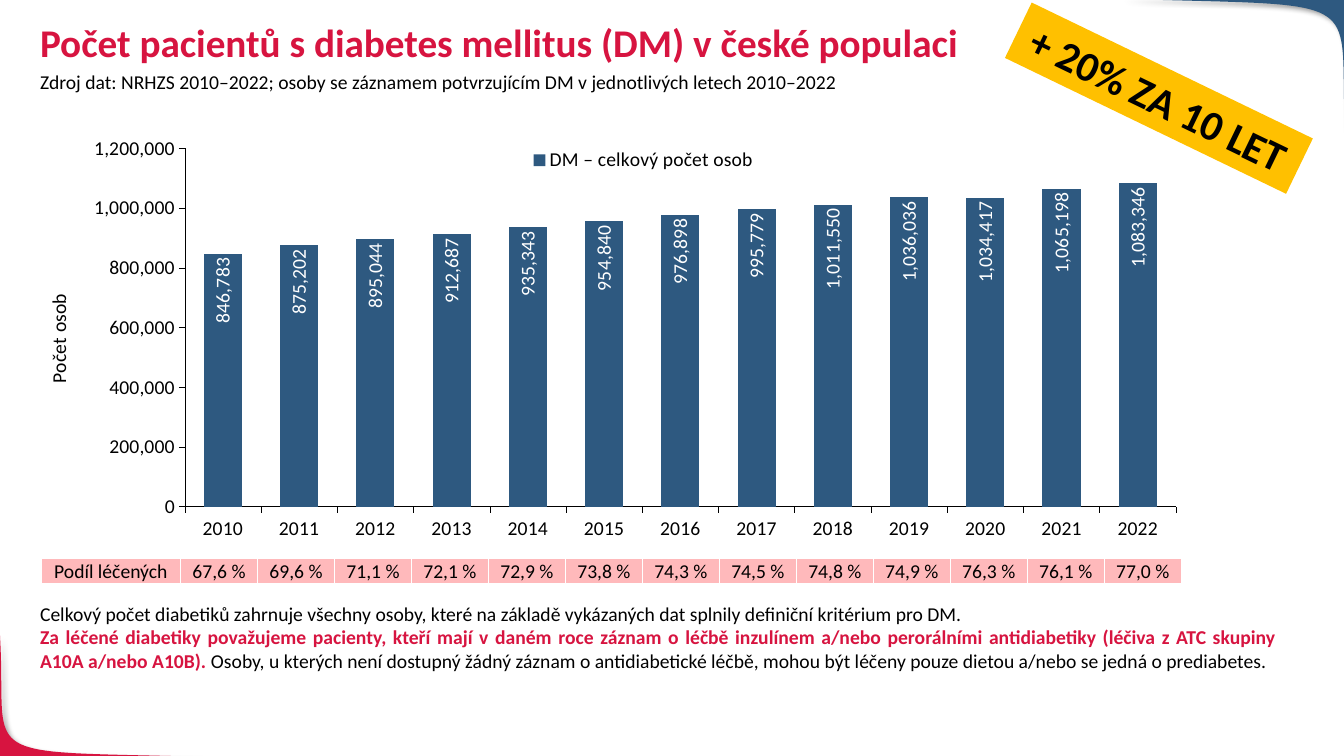
from dataclasses import dataclass

from lxml import etree
from pptx import Presentation
from pptx.chart.data import CategoryChartData
from pptx.dml.color import RGBColor
from pptx.enum.chart import XL_CHART_TYPE, XL_LABEL_POSITION, XL_LEGEND_POSITION, XL_TICK_MARK
from pptx.enum.shapes import MSO_SHAPE
from pptx.enum.text import MSO_ANCHOR, PP_ALIGN
from pptx.oxml import parse_xml
from pptx.oxml.ns import nsdecls, qn
from pptx.util import Cm, Pt


@dataclass(frozen=True)
class Theme:
    font: str = "Calibri"
    red: RGBColor = RGBColor(0xD7, 0x14, 0x40)
    blue: RGBColor = RGBColor(0x2E, 0x59, 0x80)
    pink: RGBColor = RGBColor(0xFF, 0xB9, 0xBB)
    amber: RGBColor = RGBColor(0xFF, 0xC0, 0x00)
    black: RGBColor = RGBColor(0, 0, 0)
    white: RGBColor = RGBColor(0xFF, 0xFF, 0xFF)
    title: Pt = Pt(28)
    badge: Pt = Pt(30)
    body: Pt = Pt(14)
    axis: Pt = Pt(0.32)


theme = Theme()


def style(font, color=theme.black, size=theme.body, bold=False):
    for name, value in {"name": theme.font, "size": size, "bold": bold}.items():
        setattr(font, name, value)
    font.color.rgb = color


def add_layout(parent, **values):
    """Insert a manual chart layout at its place in the schema order."""
    for old in parent.findall(qn("c:layout")):
        parent.remove(old)
    layout = parse_xml(f"<c:layout {nsdecls('c')}><c:manualLayout/></c:layout>")
    for tag, val in values.items():
        etree.SubElement(layout[0], qn(f"c:{tag}")).set("val", str(val))
    position = parent.find(qn("c:legendPos"))
    parent.insert(0 if position is None else parent.index(position) + 1, layout)


prs = Presentation()
prs.slide_width, prs.slide_height = Cm(33.87), Cm(19.05)
s = prs.slides.add_slide(prs.slide_layouts[6])

# Curved corners: four Bézier points in cm, the outer corner, the fill
corners = [
    ([(5.41, 19.08), (-0.86, 18.9), (0.2, 19.28), (0, 16)], (-0.03, 19.08), theme.red),
    ([(28.22, -0.03), (34.8, 0.18), (33.68, -0.25), (33.91, 3.61)], (33.91, -0.03), theme.blue),
]
STEPS = 40
for bezier, corner, color in corners:
    points = []
    for i in range(STEPS + 1):
        t = i / STEPS
        weights = ((1 - t) ** 3, 3 * t * (1 - t) ** 2, 3 * t * t * (1 - t), t ** 3)
        points.append([Cm(sum(w * pt[k] for w, pt in zip(weights, bezier))) for k in (0, 1)])
    outline = s.shapes.build_freeform(*points[0])
    outline.add_line_segments(points[1:] + [[Cm(v) for v in corner]], close=True)
    sp = outline.convert_to_shape()
    sp.fill.solid()
    sp.fill.fore_color.rgb = color
    sp.line.fill.background()
    sp._element.spPr.append(parse_xml(
        f'<a:effectLst {nsdecls("a")}><a:outerShdw blurRad="50800" dist="38100" dir="2700000">'
        '<a:srgbClr val="000000"><a:alpha val="40000"/></a:srgbClr></a:outerShdw></a:effectLst>'))

# Text boxes: place in cm, alignment, paragraphs of (text, font values)
red_bold = {"color": theme.red, "bold": True}
texts = [
    ((0.76, 15.04, 31.67, 2.06), PP_ALIGN.JUSTIFY, [
        [("Celkový počet diabetiků zahrnuje všechny osoby, které na základě vykázaných dat "
          "splnily definiční kritérium pro DM.", {})],
        [("Za léčené diabetiky považujeme pacienty, kteří mají v daném roce záznam o léčbě "
          "inzulínem a/nebo perorálními antidiabetiky (léčiva z ATC skupiny A10A a/nebo A10B).",
          red_bold),
         (" Osoby, u kterých není dostupný žádný záznam o antidiabetické léčbě, mohou být "
          "léčeny pouze dietou a/nebo se jedná o prediabetes.", {})]]),
    ((0.76, 0.46, 29.21, 1.75), PP_ALIGN.LEFT, [
        [("Počet pacientů s diabetes mellitus (DM) v české populaci",
          {**red_bold, "size": theme.title})]]),
    ((0.76, 1.63, 32.94, 0.86), PP_ALIGN.LEFT, [
        [("Zdroj dat: NRHZS 2010–2022; osoby se záznamem potvrzujícím DM "
          "v jednotlivých letech 2010–2022", {})]]),
]
for place, align, paragraphs in texts:
    tf = s.shapes.add_textbox(*map(Cm, place)).text_frame
    tf.word_wrap = True
    for i, runs in enumerate(paragraphs):
        p = tf.add_paragraph() if i else tf.paragraphs[0]
        p.alignment = align
        for text, values in runs:
            r = p.add_run()
            r.text = text
            style(r.font, **values)
            if values.get("size") == theme.title:
                p.line_spacing = 0.9

# Column chart
data = CategoryChartData(number_format="#,##0")
data.categories = [str(year) for year in range(2010, 2023)]
data.add_series("DM – celkový počet osob", [
    846783, 875202, 895044, 912687, 935343, 954840, 976898,
    995779, 1011550, 1036036, 1034417, 1065198, 1083346])
chart = s.shapes.add_chart(XL_CHART_TYPE.COLUMN_CLUSTERED, Cm(1.04), Cm(2.26),
                           Cm(29.18), Cm(11.46), data).chart
style(chart.font)
chart.has_title = False
chart.has_legend = True
chart.legend.position = XL_LEGEND_POSITION.BOTTOM
chart.legend.include_in_layout = True
style(chart.legend.font)
add_layout(chart.legend._element, xMode="edge", yMode="edge", x=0.42, y=0.12, w=0.2, h=0.07)
add_layout(chart._chartSpace.chart.plotArea, layoutTarget="inner", xMode="edge", yMode="edge",
           x=0.124, y=0.129, w=0.856, h=0.788)

for axis in (chart.category_axis, chart.value_axis):
    axis.has_major_gridlines = False
    axis.major_tick_mark = XL_TICK_MARK.OUTSIDE
    axis.format.line.color.rgb = theme.black
    axis.format.line.width = theme.axis
    style(axis.tick_labels.font)
values_axis = chart.value_axis
values_axis.minimum_scale, values_axis.maximum_scale, values_axis.major_unit = 0, 1200000, 200000
values_axis.tick_labels.number_format = "#,##0"
values_axis.tick_labels.number_format_is_linked = False
p = values_axis.axis_title.text_frame.paragraphs[0]
r = p.add_run()
r.text = "Počet osob"
style(r.font)

plot = chart.plots[0]
plot.gap_width, plot.overlap, plot.vary_by_categories = 100, -10, False
series = plot.series[0]
series.format.fill.solid()
series.format.fill.fore_color.rgb = theme.blue
labels = series.data_labels
for name, value in {"show_value": True, "position": XL_LABEL_POSITION.INSIDE_END,
                    "number_format": "#,##0", "number_format_is_linked": False}.items():
    setattr(labels, name, value)
style(labels.font, theme.white)
body_pr = labels._element.find(".//" + qn("a:bodyPr"))
body_pr.set("rot", "-5400000")
body_pr.set("vert", "horz")

# Share of treated patients, one column under each bar
shares = ["67,6 %", "69,6 %", "71,1 %", "72,1 %", "72,9 %", "73,8 %", "74,3 %",
          "74,5 %", "74,8 %", "74,9 %", "76,3 %", "76,1 %", "77,0 %"]
table = s.shapes.add_table(1, len(shares) + 1, Cm(1.04), Cm(14.07), Cm(28.73), Cm(0.64)).table
table.first_row = table.horz_banding = False
for i, text in enumerate(["Podíl léčených"] + shares):
    table.columns[i].width = Cm(1.94 if i else 3.51)
    cell = table.cell(0, i)
    cell.fill.solid()
    cell.fill.fore_color.rgb = theme.pink
    cell.vertical_anchor = MSO_ANCHOR.MIDDLE
    cell.margin_left = cell.margin_right = cell.margin_top = Cm(0.02)
    cell.margin_bottom = 0
    p = cell.text_frame.paragraphs[0]
    p.alignment = PP_ALIGN.CENTER
    r = p.add_run()
    r.text = text
    style(r.font)

# Tilted badge
badge = s.shapes.add_shape(MSO_SHAPE.RECTANGLE, Cm(25.27), Cm(1.7), Cm(7.87), Cm(1.55))
badge.rotation = 25.8
badge.shadow.inherit = False
badge.fill.solid()
badge.fill.fore_color.rgb = theme.amber
badge.line.fill.background()
p = badge.text_frame.paragraphs[0]
p.alignment = PP_ALIGN.CENTER
r = p.add_run()
r.text = "+ 20% ZA 10 LET"
style(r.font, size=theme.badge, bold=True)

prs.save("out.pptx")
